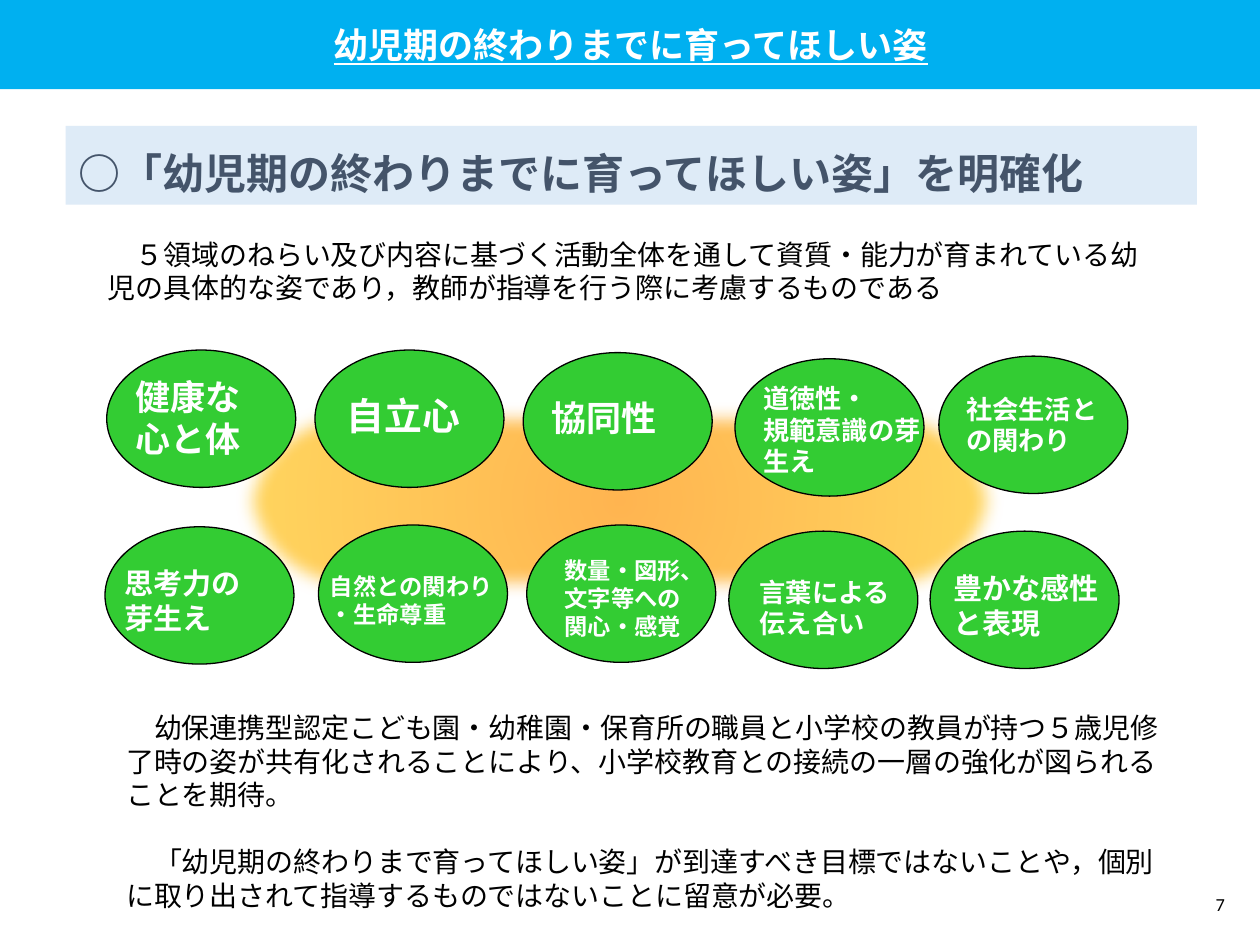
from pptx import Presentation
from pptx.dml.color import RGBColor
from pptx.enum.shapes import MSO_SHAPE
from pptx.enum.text import MSO_ANCHOR, PP_ALIGN
from pptx.oxml import parse_xml
from pptx.oxml.ns import nsdecls
from pptx.util import Pt

OVAL, RECT, ROUNDED = MSO_SHAPE.OVAL, MSO_SHAPE.RECTANGLE, MSO_SHAPE.ROUNDED_RECTANGLE
TOP, MIDDLE = MSO_ANCHOR.TOP, MSO_ANCHOR.MIDDLE
LEFT, CENTER, RIGHT = PP_ALIGN.LEFT, PP_ALIGN.CENTER, PP_ALIGN.RIGHT
TITLE_ONLY = 5

COLORS = {
    "bar": "00B0F0", "band": "DEEBF7", "heading": "44546A", "oval": "33CC33",
    "glow_center": "FFB450", "glow_edge": "FFD75F", "black": "000000", "white": "FFFFFF",
}
SANS, SERIF, LATIN, DIGITS = "Noto Sans CJK JP", "Times New Roman", "Arial", "Calibri"
OVAL_SIZE = (108, 78.5)

# Oval left and top, text left, top and width, font size, lines
GOALS = [
    ((61, 200), (70.5, 211, 91), 20, ["健康な", "心と体"]),
    ((180, 200), (191, 221, 91), 21.6, ["自立心"]),
    ((299, 201.5), (308, 223, 91), 20, ["協同性"]),
    ((420, 205), (429, 215, 109.5), 15, ["道徳性・", "規範意識の芽生え"]),
    ((536.5, 203.5), (545, 221, 91.5), 15, ["社会生活との関わり"]),
    ((60, 301), (64, 319.5, 109.5), 16.6, ["思考力の", "芽生え"]),
    ((182, 300), (181.5, 323.5, 113), 13.3, ["自然との関わり", "・生命尊重"]),
    ((301, 300), (315.5, 314.5, 98), 13.3, ["数量・図形、", "文字等への", "関心・感覚"]),
    ((416.5, 303.5), (427, 325.5, 110), 15, ["言葉による", "伝え合い"]),
    ((531.5, 303.5), (538, 322.5, 113), 16.6, ["豊かな感性", "と表現"]),
]
INTRO = ["　５領域のねらい及び内容に基づく活動全体を通して資質・能力が育まれている幼児の"
         "具体的な姿であり，教師が指導を行う際に考慮するものである"]
NOTES = [
    "　幼保連携型認定こども園・幼稚園・保育所の職員と小学校の教員が持つ５歳児修了時の姿が"
    "共有化されることにより、小学校教育との接続の一層の強化が図られることを期待。",
    "　「幼児期の終わりまで育ってほしい姿」が到達すべき目標ではないことや，個別に"
    "取り出されて指導するものではないことに留意が必要。",
]


def rgb(name):
    return RGBColor.from_string(COLORS[name])


class Deck:
    def __init__(self, width, height):
        self.prs = Presentation()
        self.prs.slide_width, self.prs.slide_height = Pt(width), Pt(height)
        self.s = self.prs.slides.add_slide(self.prs.slide_layouts[TITLE_ONLY])

    def set_lines(self, sp, lines, size, font, color="black", bold=False, align=LEFT,
                  anchor=TOP, gap=0, spacing=None):
        tf = sp.text_frame
        tf.word_wrap = True
        tf.vertical_anchor = anchor
        for i, line in enumerate(lines):
            p = tf.add_paragraph() if i else tf.paragraphs[0]
            p.text = line
            p.alignment = align
            p.space_before = Pt(gap if i else 0)
            p.line_spacing = spacing
            p.font.size, p.font.name, p.font.bold = Pt(size), font, bold
            p.font.color.rgb = rgb(color)

    def title(self, box, text):
        sp = self.s.shapes.title
        sp.left, sp.top, sp.width, sp.height = map(Pt, box)
        sp.fill.solid()
        sp.fill.fore_color.rgb = rgb("bar")
        self.set_lines(sp, [text], 20, SANS, "white", True, CENTER, MIDDLE)
        sp.text_frame.paragraphs[0].font.underline = True

    def text(self, box, lines, size, font, **style):
        sp = self.s.shapes.add_textbox(*map(Pt, box))
        self.set_lines(sp, lines, size, font, **style)

    def shape(self, kind, box, fill, outlined=False):
        sp = self.s.shapes.add_shape(kind, *map(Pt, box))
        sp.shadow.inherit = False
        sp.fill.solid()
        sp.fill.fore_color.rgb = rgb(fill)
        if outlined:
            sp.line.color.rgb = rgb("black")
            sp.line.width = Pt(0.75)
        else:
            sp.line.fill.background()
        return sp

    def glow(self, box, blur):
        """Rounded patch, darker in the middle, with blurred edges."""
        sp = self.shape(ROUNDED, box, "glow_edge")
        sp.adjustments[0] = 0.5
        spPr = sp._element.spPr
        solid = spPr.find("{*}solidFill")
        spPr.replace(solid, parse_xml(
            f'<a:gradFill {nsdecls("a")} rotWithShape="1"><a:gsLst>'
            f'<a:gs pos="0"><a:srgbClr val="{COLORS["glow_center"]}"/></a:gs>'
            f'<a:gs pos="100000"><a:srgbClr val="{COLORS["glow_edge"]}"/></a:gs></a:gsLst>'
            '<a:path path="circle"><a:fillToRect l="50000" t="50000" r="50000" b="50000"/>'
            '</a:path></a:gradFill>'))
        spPr.find("{*}effectLst").append(
            parse_xml(f'<a:softEdge {nsdecls("a")} rad="{Pt(blur)}"/>'))


def main():
    deck = Deck(720, 540)
    deck.title((0, 0, 721, 51), "幼児期の終わりまでに育ってほしい姿")
    band = deck.shape(RECT, (37.5, 72, 646.5, 45), "band")
    deck.set_lines(band, ["○「幼児期の終わりまでに育ってほしい姿」を明確化"], 24, LATIN,
                   color="heading", bold=True, spacing=1.3)
    deck.text((54.5, 132, 613, 47), INTRO, 16, SANS)

    deck.glow((134, 230, 440, 112), 10)
    for corner, _, _, _ in GOALS:
        deck.shape(OVAL, corner + OVAL_SIZE, "oval", outlined=True)
    for _, (x, y, w), size, lines in GOALS:
        height = 7.2 + 1.2 * size * max(len(lines), 2)
        deck.text((x, y, w, height), lines, size, SERIF, color="white", bold=True)

    deck.text((65, 402.5, 613, 128), NOTES, 16, SANS, gap=19)
    deck.text((545, 502, 162, 29), ["7"], 10.5, DIGITS, align=RIGHT, anchor=MIDDLE)
    deck.prs.save("out.pptx")


if __name__ == "__main__":
    main()
